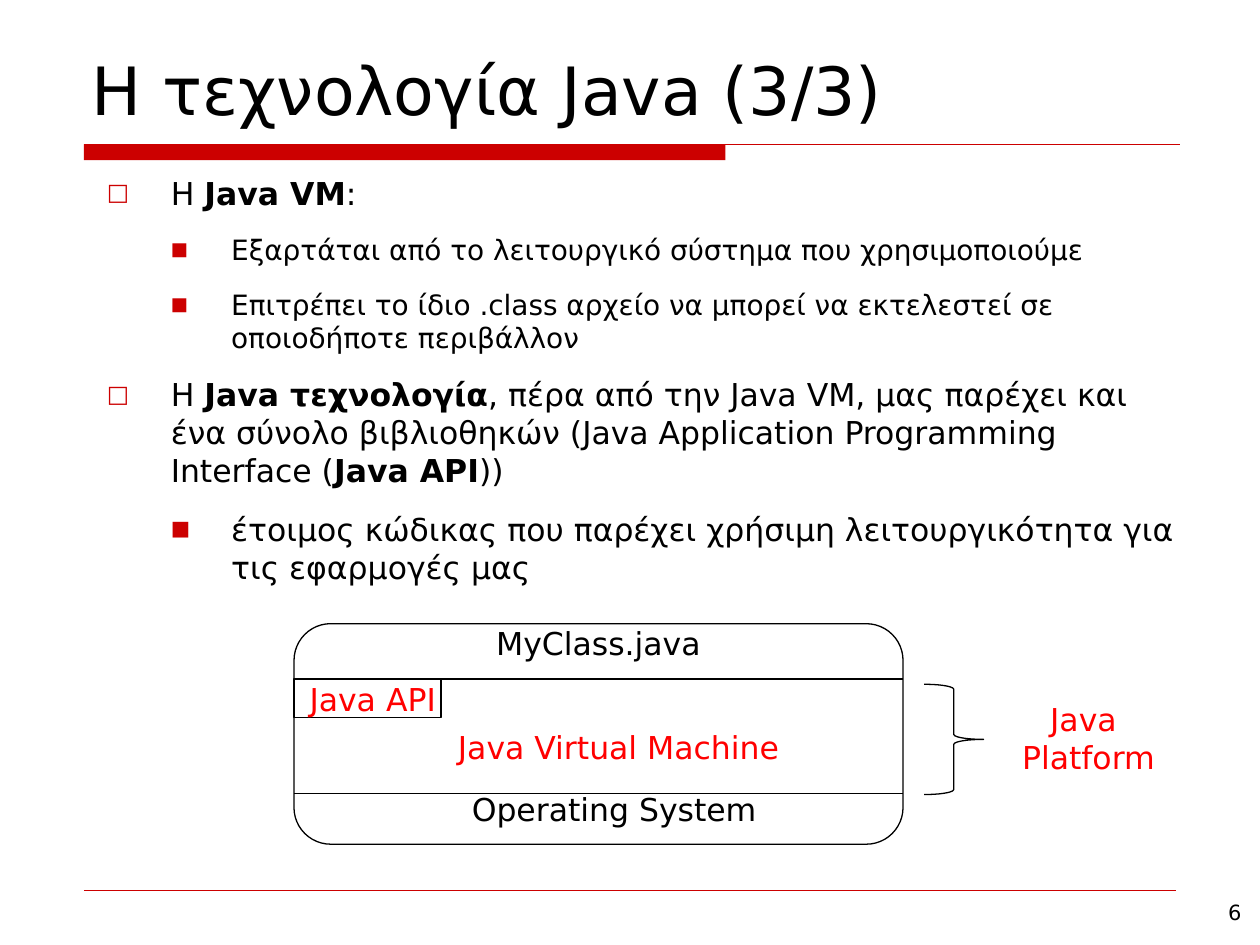
from lxml import etree
from pptx import Presentation
from pptx.dml.color import RGBColor
from pptx.enum.shapes import MSO_CONNECTOR, MSO_SHAPE
from pptx.enum.text import MSO_ANCHOR, PP_ALIGN
from pptx.oxml.ns import qn
from pptx.util import Pt

STRAIGHT = MSO_CONNECTOR.STRAIGHT
RECT, ROUNDED = MSO_SHAPE.RECTANGLE, MSO_SHAPE.ROUNDED_RECTANGLE
BRACE = MSO_SHAPE.RIGHT_BRACE
LEFT, CENTER, RIGHT = PP_ALIGN.LEFT, PP_ALIGN.CENTER, PP_ALIGN.RIGHT
BOTTOM = MSO_ANCHOR.BOTTOM

FONT = "DejaVu Sans"
COLORS = {"text": "000000", "accent": "CC0000", "platform": "FF0000"}
# Per level: left margin, hanging indent, bullet, bullet size in percent
LEVELS = [(36.5, 36.5, "□", 75), (71, 34.5, "■", 65)]

# Level, size, runs; every second run is bold
BULLETS = [
    (0, 18, ["Η ", "Java VM", ":"]),
    (1, 16, ["Εξαρτάται από το λειτουργικό σύστημα που χρησιμοποιούμε"]),
    (1, 16, ["Επιτρέπει το ίδιο .class αρχείο να μπορεί να εκτελεστεί σε "
             "οποιοδήποτε περιβάλλον"]),
    (0, 18, ["Η ", "Java τεχνολογία",
             ", πέρα από την Java VM, μας παρέχει και ένα σύνολο βιβλιοθηκών "
             "(Java Application Programming Interface (", "Java API", "))"]),
    (1, 18, ["έτοιμος κώδικας που παρέχει χρήσιμη λειτουργικότητα για τις "
             "εφαρμογές μας"]),
]

# Text, left, top, width, height, colour
LABELS = [
    ("MyClass.java", 258, 353, 168, 29, "text"),
    ("Java API", 150, 385.2, 126, 29, "platform"),
    ("Java Virtual Machine", 239, 412.6, 229, 29, "platform"),
    ("Operating System", 222, 447.8, 258, 29, "text"),
    ("Java \nPlatform", 570, 396.7, 104, 51, "platform"),
]

STACK_LEFT, STACK_TOP, STACK_WIDTH, STACK_HEIGHT = 168, 356.4, 348, 126
VM_TOP, VM_BOTTOM = 388, 453.6


def rgb(name):
    return RGBColor.from_string(COLORS[name])


def format_run(r, size, color="text", bold=False):
    r.font.name = FONT
    r.font.size = Pt(size)
    r.font.bold = bold
    r.font.color.rgb = rgb(color)


def add_title(s, text):
    title = s.shapes.title
    title.left, title.top = Pt(45), Pt(11.5)
    title.width, title.height = Pt(630), Pt(66)
    tf = title.text_frame
    tf.text = text
    tf.vertical_anchor = BOTTOM
    p = tf.paragraphs[0]
    p.alignment = LEFT
    format_run(p.runs[0], 38)


def add_text_frame(s, left, top, width, height):
    tf = s.shapes.add_textbox(Pt(left), Pt(top), Pt(width), Pt(height)).text_frame
    tf.word_wrap = True
    return tf


def add_label(s, text, left, top, width, height, color, size=18, align=CENTER):
    tf = add_text_frame(s, left, top, width, height)
    tf.text = text
    for p in tf.paragraphs:
        p.alignment = align
        format_run(p.runs[0], size, color)


def set_bullet(p, level):
    margin, hanging, char, percent = LEVELS[level]
    p.level = level
    pPr = p._p.get_or_add_pPr()
    pPr.set("marL", str(Pt(margin)))
    pPr.set("indent", str(-Pt(hanging)))
    clr = etree.SubElement(pPr, qn("a:buClr"))
    etree.SubElement(clr, qn("a:srgbClr"), val=COLORS["accent"])
    etree.SubElement(pPr, qn("a:buSzPct"), val=str(percent * 1000))
    etree.SubElement(pPr, qn("a:buFont"), typeface=FONT)
    etree.SubElement(pPr, qn("a:buChar"), char=char)


def add_bullets(s):
    tf = add_text_frame(s, 54, 95.8, 630, 363)
    for i, (level, size, texts) in enumerate(BULLETS):
        p = tf.add_paragraph() if i else tf.paragraphs[0]
        set_bullet(p, level)
        p.space_before = Pt(6 if i else 0)
        p.space_after = Pt(6)
        for j, text in enumerate(texts):
            r = p.add_run()
            r.text = text
            format_run(r, size, bold=j % 2 == 1)


def add_rule(s, left, right, y, color="text", weight=0.75):
    """Add a horizontal line."""
    line = s.shapes.add_connector(STRAIGHT, Pt(left), Pt(y), Pt(right), Pt(y))
    line.line.color.rgb = rgb(color)
    line.line.width = Pt(weight)
    etree.SubElement(line._element.spPr, qn("a:effectLst"))


def add_bar(s, left, top, width, height):
    sp = s.shapes.add_shape(RECT, Pt(left), Pt(top), Pt(width), Pt(height))
    sp.shadow.inherit = False
    sp.fill.solid()
    sp.fill.fore_color.rgb = rgb("accent")
    sp.line.fill.background()


def add_outline(s, kind, left, top, width, height):
    """Add an unfilled preset shape with a thin black line."""
    sp = s.shapes.add_shape(kind, Pt(left), Pt(top), Pt(width), Pt(height))
    sp.shadow.inherit = False
    sp.fill.background()
    sp.line.color.rgb = rgb("text")
    sp.line.width = Pt(0.75)


def add_platform_diagram(s):
    add_outline(s, ROUNDED, STACK_LEFT, STACK_TOP, STACK_WIDTH, STACK_HEIGHT)
    for y in (VM_TOP, VM_BOTTOM):
        add_rule(s, STACK_LEFT, STACK_LEFT + STACK_WIDTH, y)
    add_outline(s, RECT, STACK_LEFT, VM_TOP, 84, 22)
    add_outline(s, BRACE, 528, 391, 34, 63)
    for label in LABELS:
        add_label(s, *label)


def main():
    prs = Presentation()
    prs.slide_width, prs.slide_height = Pt(720), Pt(540)
    s = prs.slides.add_slide(prs.slide_layouts[5])
    add_bar(s, 48, 82.5, 366.5, 9)
    add_rule(s, 48, 674.5, 82.5, "accent")
    add_rule(s, 48, 672, 508.8, "accent", 0.25)
    add_title(s, "Η τεχνολογία Java (3/3)")
    add_bullets(s)
    add_platform_diagram(s)
    add_label(s, "6", 566.5, 510.5, 150, 24, "text", 12, RIGHT)
    prs.save("out.pptx")


if __name__ == "__main__":
    main()
